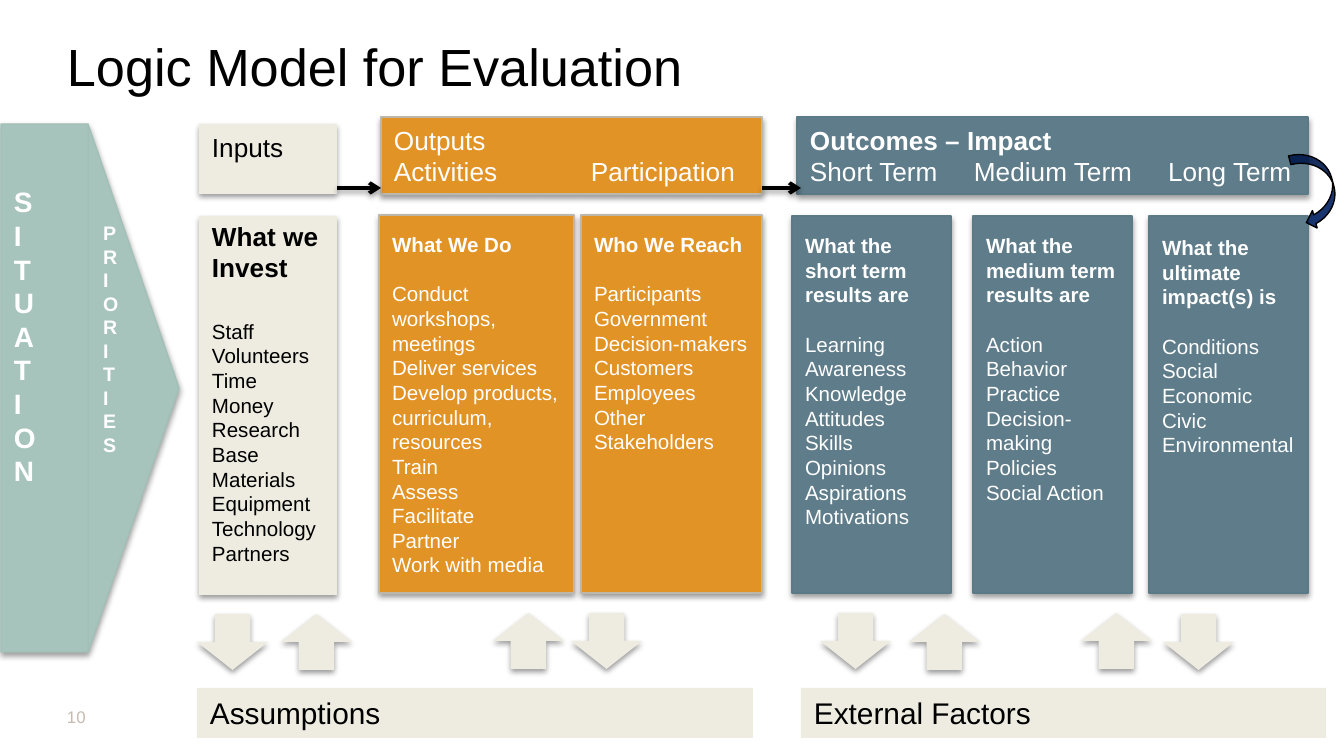
from pptx import Presentation, util as u
from pptx.dml.color import RGBColor
from pptx.enum import shapes, text
from pptx.oxml import ns
from lxml import etree

PX = 914400 / 134.4  # EMU in one px
BLACK = RGBColor(0x00, 0x00, 0x00)
WHITE = RGBColor(0xFF, 0xFF, 0xFF)
CREAM = RGBColor(0xEE, 0xEC, 0xE1)
ORANGE = RGBColor(0xE2, 0x93, 0x26)
ORANGE_LINE = RGBColor(0xBC, 0xB7, 0xAA)
SLATE = RGBColor(0x5E, 0x7C, 0x8A)
SLATE_LINE = RGBColor(0x5B, 0x7A, 0x88)
GREEN = RGBColor(0xA6, 0xC4, 0xBC)
GREEN_LINE = RGBColor(0xA2, 0xC0, 0xB8)
NAVY = RGBColor(0x00, 0x20, 0x60)
TAN = RGBColor(0xC6, 0xBB, 0xAE)

# Fill, outline and text colour of each part of the model
INPUTS = (CREAM, None, BLACK)
OUTPUTS = (ORANGE, ORANGE_LINE, WHITE)
OUTCOMES = (SLATE, SLATE_LINE, WHITE)

# box, style, first line bold, lines, tab stops
HEADERS = [
    ((199, 124, 138, 70), INPUTS, False, ["Inputs"], []),
    ((381, 117, 381, 77), OUTPUTS, False,
     ["Outputs", "Activities\tParticipation"], [197]),
    ((797, 117, 511, 77), OUTCOMES, True,
     ["Outcomes – Impact", "Short Term\tMedium Term\tLong Term"], [164, 358]),
]
# box, style, top inset, heading, heading size, gap below heading, items
COLUMNS = [
    ((199, 216, 138, 379), INPUTS, 4, "What we Invest", 14, 19.2,
     ["Staff", "Volunteers", "Time", "Money", "Research Base", "Materials",
      "Equipment", "Technology", "Partners"]),
    ((379, 215, 195, 378), OUTPUTS, 17, "What We Do", 11, 13.2,
     ["Conduct workshops, meetings", "Deliver services",
      "Develop products, curriculum, resources", "Train", "Assess",
      "Facilitate", "Partner", "Work with media"]),
    ((581, 215, 181, 378), OUTPUTS, 17, "Who We Reach", 11, 13.2,
     ["Participants", "Government", "Decision-makers", "Customers",
      "Employees", "Other Stakeholders"]),
    ((792, 216, 159, 377), OUTCOMES, 17, "What the short term results are", 11, 13.2,
     ["Learning", "Awareness", "Knowledge", "Attitudes", "Skills", "Opinions",
      "Aspirations", "Motivations"]),
    ((973, 216, 159, 377), OUTCOMES, 17, "What the medium term results are", 11, 13.2,
     ["Action", "Behavior", "Practice", "Decision-making", "Policies",
      "Social Action"]),
    ((1149, 216, 159, 377), OUTCOMES, 19, "What the ultimate impact(s) is", 11, 13.2,
     ["Conditions", "Social", "Economic", "Civic", "Environmental"]),
]
FOOTERS = [((197, 688, 556, 50), "Assumptions"),
           ((801, 688, 525, 50), "External Factors")]
# left, top, rotation
BLOCK_ARROWS = [(197, 614, 180), (281, 614, 0), (493, 613, 0), (571, 613, 180),
                (820, 613, 180), (909, 614, 0), (1081, 613, 0), (1163, 614, 180)]
LINKS = [(337, 381), (762, 801)]  # from x, to x
LINK_Y = 188


def px(value):
    return u.Emu(round(value * PX))


def add_shadow(shape):
    effects = shape._element.spPr.find(ns.qn("a:effectLst"))
    shadow = etree.SubElement(effects, ns.qn("a:outerShdw"), blurRad="39370",
                              dist="20320", dir="5400000", rotWithShape="0")
    color = etree.SubElement(shadow, ns.qn("a:srgbClr"), val="000000")
    etree.SubElement(color, ns.qn("a:alpha"), val="38000")


def add_box(box, fill, line=None, kind=shapes.MSO_SHAPE.RECTANGLE, shadow=True):
    shape = slide.shapes.add_shape(kind, *map(px, box))
    shape.fill.solid()
    shape.fill.fore_color.rgb = fill
    if line is None:
        shape.line.fill.background()
    else:
        shape.line.color.rgb = line
        shape.line.width = u.Pt(0.75)
    shape.shadow.inherit = False
    if shadow:
        add_shadow(shape)
    return shape


def add_label(box):
    return slide.shapes.add_textbox(*map(px, box))


def write(shape, lines, size=11, color=BLACK, bold=False, heading_size=None,
          heading_bold=None, gap=0, insets=(13, 7, 4, 7), tabs=(),
          anchor=text.MSO_ANCHOR.TOP, stacked=False):
    """Write one paragraph per line; the heading options apply to the first."""
    frame = shape.text_frame
    frame.word_wrap = True
    frame.vertical_anchor = anchor
    (frame.margin_left, frame.margin_top,
     frame.margin_right, frame.margin_bottom) = map(px, insets)
    if stacked:
        frame._txBody.bodyPr.set("vert", "wordArtVert")
    for index, line in enumerate(lines):
        first = index == 0
        paragraph = frame.paragraphs[0] if first else frame.add_paragraph()
        paragraph.text = line
        paragraph.alignment = text.PP_ALIGN.LEFT
        line_size = heading_size if first and heading_size else size
        paragraph.line_spacing = u.Pt(line_size * 1.2)
        if first and gap:
            paragraph.space_after = u.Pt(gap)
        if "\t" in line:
            stops = etree.SubElement(paragraph._p.get_or_add_pPr(), ns.qn("a:tabLst"))
            for stop in tabs:
                etree.SubElement(stops, ns.qn("a:tab"), pos=str(px(stop)), algn="l")
        for run in paragraph.runs:
            run.font.name = "Arial"
            run.font.size = u.Pt(line_size)
            run.font.bold = heading_bold if first and heading_bold is not None else bold
            run.font.color.rgb = color


presentation = Presentation()
presentation.slide_width, presentation.slide_height = px(1344), px(756)
slide = presentation.slides.add_slide(presentation.slide_layouts[6])

# Title and slide number
MIDDLE = text.MSO_ANCHOR.MIDDLE
write(add_label((67, 11, 1277, 109)), ["Logic Model for Evaluation"], size=28,
      insets=(0, 0, 0, 0), anchor=MIDDLE)
write(add_label((67, 697, 313, 40)), ["10"], size=9, color=TAN,
      insets=(0, 0, 0, 0), anchor=MIDDLE)

# Situation and priorities
situation = add_box((1, 124, 178, 528), GREEN, GREEN_LINE,
                    shapes.MSO_SHAPE.RIGHT_ARROW_CALLOUT)
for index, value in enumerate((0, 1.48, 0.51, 0.5)):
    situation.adjustments[index] = value
write(situation, ["SITUATION"], size=15, color=WHITE, bold=True,
      insets=(13, 61, 13, 7), anchor=MIDDLE, stacked=True)
write(add_label((90, 214, 52, 380)), ["PRIORITIES"], size=10.5, color=WHITE,
      bold=True, insets=(13, 7, 13, 7), anchor=MIDDLE, stacked=True)

# Header row
for box, (fill, line, color), bold, lines, tabs in HEADERS:
    write(add_box(box, fill, line), lines, size=14, color=color,
          heading_bold=bold, tabs=tabs)

# Footer bars
for box, label in FOOTERS:
    write(add_box(box, CREAM, shadow=False), [label], size=16)

# Block arrows between columns and footers
for left, top, rotation in BLOCK_ARROWS:
    arrow = add_box((left, top, 71, 56), CREAM, kind=shapes.MSO_SHAPE.UP_ARROW)
    arrow.rotation = rotation

# Links between headers
for start, end in LINKS:
    link = slide.shapes.add_connector(shapes.MSO_CONNECTOR.STRAIGHT, px(start),
                                      px(LINK_Y), px(end), px(LINK_Y))
    link.line.color.rgb = BLACK
    link.line.width = u.Pt(2)
    etree.SubElement(link.line._get_or_add_ln(), ns.qn("a:tailEnd"), type="arrow")
    etree.SubElement(link._element.spPr, ns.qn("a:effectLst"))
    add_shadow(link)

# Columns
for box, (fill, line, color), top, heading, heading_size, gap, items in COLUMNS:
    write(add_box(box, fill, line), [heading] + items, color=color,
          heading_size=heading_size, heading_bold=True, gap=gap,
          insets=(13, top, 4, 0))

# Curved arrow from the header to the last column
curve = add_box((1277, 171, 78, 36), NAVY, BLACK,
                shapes.MSO_SHAPE.CURVED_DOWN_ARROW, shadow=False)
curve.rotation = 75
navy = curve._element.spPr.find(ns.qn("a:solidFill")).find(ns.qn("a:srgbClr"))
etree.SubElement(navy, ns.qn("a:alpha"), val="90000")

presentation.save("out.pptx")
